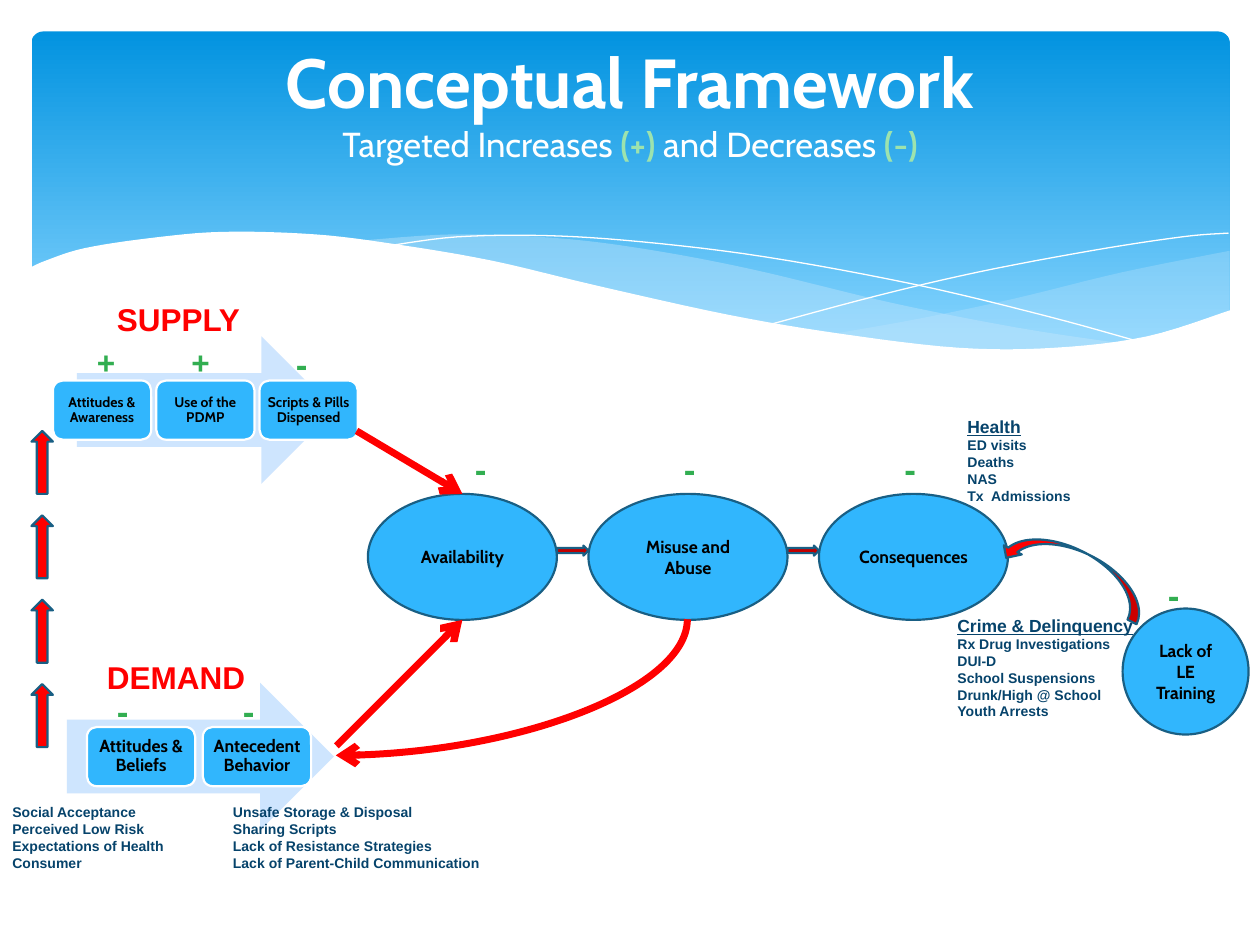
from dataclasses import dataclass
from lxml import etree
from pptx import Presentation
from pptx.dml.color import RGBColor
from pptx.enum.shapes import MSO_CONNECTOR, MSO_SHAPE
from pptx.enum.text import MSO_ANCHOR, MSO_AUTO_SIZE, PP_ALIGN
from pptx.oxml.ns import qn
from pptx.util import Inches, Pt

CENTER, MIDDLE = PP_ALIGN.CENTER, MSO_ANCHOR.MIDDLE
FIT, FIXED = MSO_AUTO_SIZE.SHAPE_TO_FIT_TEXT, MSO_AUTO_SIZE.NONE
ROUND, OVAL = MSO_SHAPE.ROUNDED_RECTANGLE, MSO_SHAPE.OVAL
RIGHT, UP, BEND = MSO_SHAPE.RIGHT_ARROW, MSO_SHAPE.UP_ARROW, MSO_SHAPE.CURVED_UP_ARROW
STRAIGHT, CURVE = MSO_CONNECTOR.STRAIGHT, MSO_CONNECTOR.CURVE


@dataclass(frozen=True)
class Theme:
    sans: str = "Cabin"
    plain: str = "Arial"
    white: str = "FFFFFF"
    black: str = "000000"
    sky: str = "0293E0"
    haze: str = "83D3FE"
    wave: str = "C6E7FC"
    pale: str = "CEE5FE"
    blue: str = "31B6FD"
    edge: str = "195F84"
    navy: str = "06436B"
    red: str = "FF0000"
    dark: str = "C00000"
    green: str = "32AE51"
    mint: str = "9DE3AE"
    title: float = 39.6
    sub: float = 19.8
    minus: float = 20
    head: float = 18
    label: float = 10
    small: float = 8
    thin: float = 1.25
    thick: float = 4


T = Theme()
SIGNS = {"+": T.head, "-": T.minus}


def rgb(code):
    return RGBColor.from_string(code)


def add_run(para, text, size, color, font=T.plain, bold=True, under=False):
    run = para.add_run()
    run.text = text
    run.font.size, run.font.name = Pt(size), font
    run.font.bold, run.font.underline = bold, under
    run.font.color.rgb = rgb(color)


def paint(shape, fill=None, line=None, width=T.thin):
    shape.shadow.inherit = False
    if fill:
        shape.fill.solid()
        shape.fill.fore_color.rgb = rgb(fill)
    else:
        shape.fill.background()
    if line:
        shape.line.color.rgb = rgb(line)
        shape.line.width = Pt(width)
    else:
        shape.line.fill.background()


def add_form(slide, kind, box, fill, line=None):
    shape = slide.shapes.add_shape(kind, *map(Inches, box))
    paint(shape, fill, line)
    return shape


def add_label(shape, text, size=T.label, pad=None):
    frame = shape.text_frame
    frame.word_wrap, frame.vertical_anchor = True, MIDDLE
    if pad is not None:
        frame.margin_left = frame.margin_right = Inches(pad)
        frame.margin_top = frame.margin_bottom = Inches(pad)
        frame.paragraphs[0].line_spacing = 0.9
    frame.paragraphs[0].alignment = CENTER
    add_run(frame.paragraphs[0], text, size, T.black, T.sans)


def add_text(slide, box, lines, size, color, wrap=True, head=None):
    """Text box with one paragraph a line, under an optional underlined head."""
    frame = slide.shapes.add_textbox(*map(Inches, box)).text_frame
    frame.word_wrap, frame.auto_size = wrap, FIT
    rows = [(line, size, False) for line in lines]
    if head:
        rows.insert(0, (head, T.label, True))
    for i, (text, pts, under) in enumerate(rows):
        para = frame.add_paragraph() if i else frame.paragraphs[0]
        add_run(para, text, pts, color, under=under)


def add_sign(slide, x, y, sign="-"):
    add_text(slide, (x, y, 0.25, 0.44), [sign], SIGNS[sign], T.green)


def add_link(slide, kind, start, end):
    link = slide.shapes.add_connector(kind, *map(Inches, start + end))
    link.line.color.rgb = rgb(T.red)
    link.line.width = Pt(T.thick)
    props = link._element.spPr
    etree.SubElement(props.find(qn("a:ln")), qn("a:tailEnd"), type="arrow")
    etree.SubElement(props, qn("a:effectLst"))
    return link


def smooth(pts, steps=6):
    """Points of a Catmull-Rom curve through pts."""
    ends = [pts[0], *pts, pts[-1]]
    out = [pts[0]]
    for a, b, c, d in zip(ends, ends[1:], ends[2:], ends[3:]):
        for t in (k / steps for k in range(1, steps + 1)):
            out.append(tuple(
                (2 * q + (r - p) * t + (2 * p - 5 * q + 4 * r - s) * t ** 2
                 + (3 * q - p - 3 * r + s) * t ** 3) / 2
                for p, q, r, s in zip(a, b, c, d)))
    return out


def add_wave(slide, x, y, pts, close=True):
    spots = [(Inches(x + a), Inches(y + b)) for a, b in pts]
    form = slide.shapes.build_freeform(*spots[0], scale=1.0)
    form.add_line_segments(spots[1:], close=close)
    return form.convert_to_shape()


def add_banner(slide, x, y, w, h):
    back = add_form(slide, ROUND, (x, y, w, h), T.sky)
    back.adjustments[0] = 0.034
    back.fill.gradient()
    back.fill.gradient_angle = 270
    for stop, color, spot in zip(back.fill.gradient_stops, (T.sky, T.haze), (0, 0.9)):
        stop.color.rgb, stop.position = rgb(color), spot

    far = smooth([(9.51, 1.74), (8.66, 1.91), (7.8, 2.12), (7.04, 2.28), (6.36, 2.4)])
    far += smooth([(6.36, 2.4), (7.2, 2.5), (7.99, 2.52), (8.72, 2.45), (9.51, 2.22)])
    near = smooth([(8.68, 2.48), (7.82, 2.35), (6.81, 2.15), (5.73, 1.89), (4.89, 1.73),
                   (4.17, 1.64), (3.36, 1.61), (2.61, 1.66)])
    near += smooth([(2.61, 1.66), (3.37, 1.78), (4.24, 1.97), (5.41, 2.23), (6.4, 2.41),
                    (7.23, 2.51), (8.03, 2.53), (8.68, 2.48)])
    for pts, alpha in ((far, 29000), (near, 40000)):
        form = add_wave(slide, x, y, pts)
        paint(form, T.wave)
        tint = form._element.spPr.find(qn("a:solidFill"))[0]
        etree.SubElement(tint, qn("a:alpha"), val=str(alpha))

    fall = [(2.84, 1.7), (3.38, 1.63), (4.08, 1.62), (4.85, 1.67), (5.83, 1.79),
            (7.02, 2.01), (8.06, 2.26), (8.82, 2.47)]
    rise = [(5.88, 2.32), (6.7, 2.1), (7.51, 1.91), (8.41, 1.74), (9.13, 1.63), (9.5, 1.6)]
    for pts in (fall, rise):
        paint(add_wave(slide, x, y, smooth(pts), False), line=T.white, width=0)

    top = smooth([(9.52, 2.21), (8.85, 2.42), (8.12, 2.51), (7.36, 2.51), (6.43, 2.4),
                  (5.54, 2.25), (4.5, 2.02), (3.66, 1.82), (2.9, 1.69), (2.25, 1.61),
                  (1.52, 1.59), (0.94, 1.64), (0.42, 1.72), (0.11, 1.82), (-0.02, 1.88)])
    paint(add_wave(slide, x, y, top + [(-0.02, 3.04), (9.52, 3.04)]), T.white)


def add_title(slide, x, y, w, h):
    title = slide.shapes.title
    title.left, title.top, title.width, title.height = map(Inches, (x, y, w, h))
    slide.shapes._spTree.append(title._element)
    frame = title.text_frame
    frame.auto_size, frame.vertical_anchor = FIXED, MIDDLE
    para = frame.paragraphs[0]
    para.alignment = CENTER
    add_run(para, "Conceptual Framework", T.title, T.white, T.sans)
    para.add_line_break()
    for text, mark in (("Targeted Increases ", False), ("(+) ", True),
                       ("and Decreases ", False), ("(-)", True)):
        add_run(para, text, T.sub, T.mint if mark else T.white, T.sans, bold=mark)


def add_side(slide, box, head, rise, cards, first, wide, step, size, pad, signs):
    """Pale arrow with its heading, cards and signs."""
    x, y = box[:2]
    add_form(slide, RIGHT, box, T.pale)
    for i, text in enumerate(cards):
        spot = (x + first + i * step, y + 0.35, wide, 0.47)
        add_label(add_form(slide, ROUND, spot, T.blue, T.white), text, size, pad)
    add_text(slide, (x + 0.22, y - rise, 1.3, 0.4), [head], T.head, T.red, wrap=False)
    for left, sign in signs:
        add_sign(slide, x + left, y, sign)


def add_flow(slide, x, y, h):
    stages = (("Availability", 0, 1.5, 0.75), ("Misuse and Abuse", 1.75, 1.58, 2.41),
              ("Consequences", 3.58, 1.5, 4.16))
    for text, left, wide, sign in stages:
        add_label(add_form(slide, OVAL, (x + left, y, wide, h), T.blue, T.edge), text)
        add_sign(slide, x + sign, y - 0.42)
        if left:
            add_form(slide, RIGHT, (x + left - 0.25, y + 0.41, 0.25, 0.08), T.dark, T.edge)


def add_cause(slide, x, y, size):
    add_label(add_form(slide, OVAL, (x, y, size, size), T.blue, T.edge), "Lack of LE Training")
    bend = add_form(slide, BEND, (x - 0.99, y - 0.46, 1.24, 0.32), T.red, T.edge)
    bend.rotation = 207
    add_sign(slide, x + 0.26, y - 0.33)


def add_notes(slide):
    for box, head, lines in (
        ((0, 6.33, 1.83, 0.77), None,
         ["Social Acceptance", "Perceived Low Risk", "Expectations of Health Consumer"]),
        ((1.75, 6.33, 2.25, 0.77), None,
         ["Unsafe Storage & Disposal", "Sharing Scripts", "Lack of Resistance Strategies",
          "Lack of Parent-Child Communication"]),
        ((7.58, 3.25, 1.17, 0.81), "Health", ["ED visits", "Deaths", "NAS", "Tx  Admissions"]),
        ((7.5, 4.83, 1.61, 1.08), "Crime & Delinquency",
         ["Rx Drug Investigations", "DUI-D", "School Suspensions", "Drunk/High @ School",
          "Youth Arrests"]),
    ):
        add_text(slide, box, lines, T.small, T.navy, head=head)


def add_links(slide):
    add_link(slide, STRAIGHT, (2.83, 3.42), (3.67, 3.92))
    add_link(slide, STRAIGHT, (2.67, 5.92), (3.67, 4.92))
    # A quarter turn makes the loop leave downward and arrive leftward.
    loop = add_link(slide, CURVE, (3.52, 4.06), (4.6, 6.85))
    props = loop._element.spPr
    props.find(qn("a:xfrm")).set("rot", "5400000")
    props.find(qn("a:prstGeom")).set("prst", "curvedConnector2")


def add_climb(slide, x, y, count=4, step=0.67):
    for i in range(count):
        add_form(slide, UP, (x, y + i * step, 0.17, 0.5), T.red, T.edge)


def main():
    deck = Presentation()
    deck.slide_width, deck.slide_height = Inches(10), Inches(7.5)
    slide = deck.slides.add_slide(deck.slide_layouts[5])
    add_banner(slide, 0.25, 0.25, 9.51, 2.7)
    add_title(slide, 0.5, 0.37, 9, 0.88)
    add_side(slide, (0.61, 2.67, 2.05, 1.17), "SUPPLY", 0.34,
             ["Attitudes & Awareness", "Use of the PDMP", "Scripts & Pills Dispensed"],
             -0.19, 0.78, 0.82, T.small, 0.01, [(0.06, "+"), (0.81, "+"), (1.64, "-")])
    add_side(slide, (0.53, 5.42, 2.12, 1.17), "DEMAND", 0.25,
             ["Attitudes & Beliefs", "Antecedent Behavior"],
             0.16, 0.86, 0.92, T.label, 0.02, [(0.3, "-"), (1.3, "-")])
    add_flow(slide, 2.92, 3.92, 1)
    add_notes(slide)
    add_cause(slide, 8.91, 4.83, 1)
    add_climb(slide, 0.25, 3.42)
    add_links(slide)
    deck.save("out.pptx")


if __name__ == "__main__":
    main()
